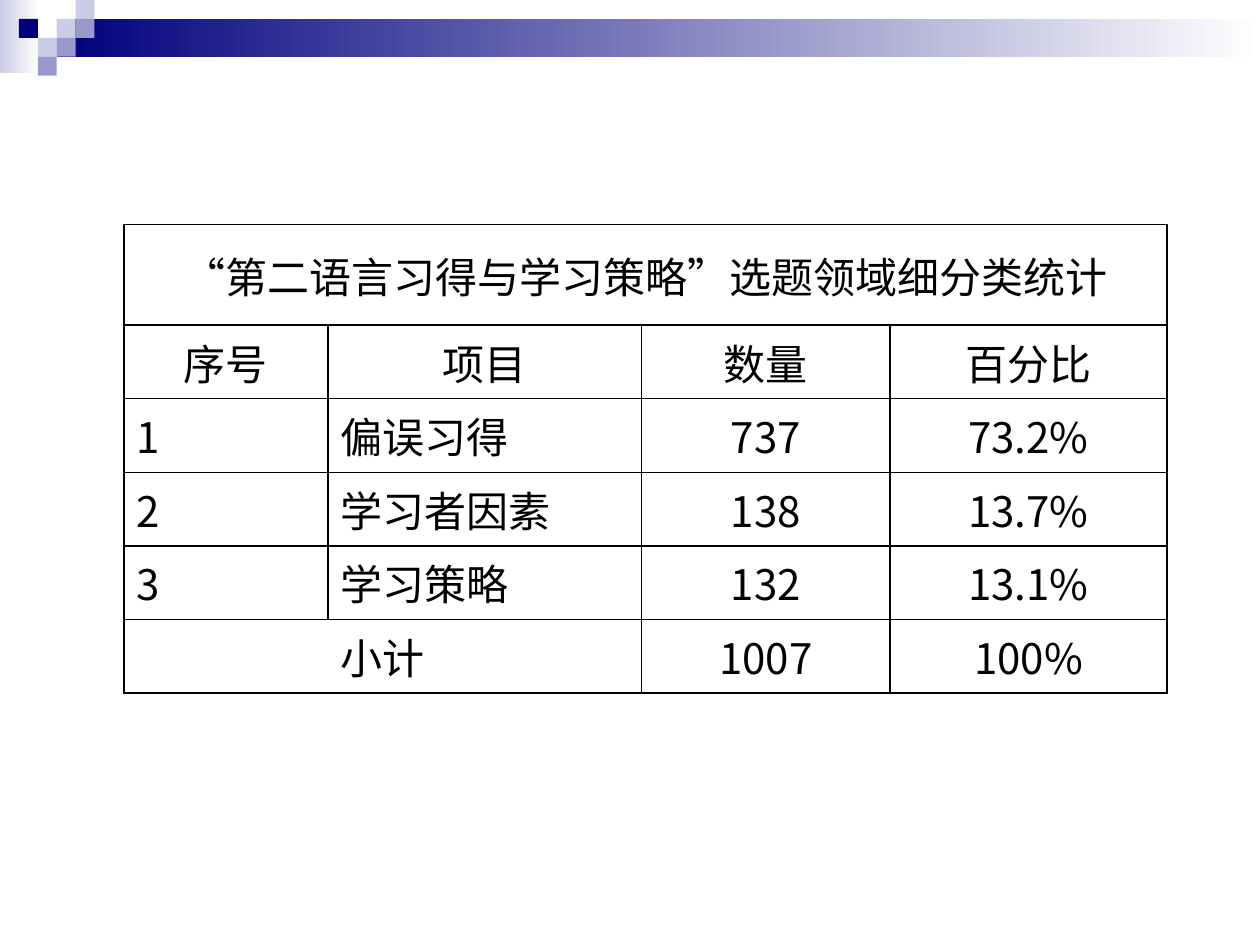
"""Build a slide with a table of topic counts under a checkered gradient banner."""
from lxml import etree
from pptx import Presentation
from pptx import util as u
from pptx.dml.color import RGBColor
from pptx.enum import shapes, text
from pptx.oxml.ns import qn

THEME = {
    "navy": "00007D", "mid": "9999CC", "pale": "CCCCE6", "white": "FFFFFF",
    "ink": "000000", "font": "Noto Sans CJK SC", "size": 24, "rule": 1,
}
SLIDE_SIZE = (720, 540)

HEADING = "“第二语言习得与学习策略”选题领域细分类统计"
COLUMN_NAMES = ("序号", "项目", "数量", "百分比")
TOPICS = [
    ("1", "偏误习得", "737", "73.2%"),
    ("2", "学习者因素", "138", "13.7%"),
    ("3", "学习策略", "132", "13.1%"),
]
SUBTOTAL = ("小计", "", "1007", "100%")

TABLE_LEFT, TABLE_TOP = 70.8, 128.2
COLUMN_WIDTHS = (116.64, 179.28, 141.84, 158.4)
ROW_HEIGHTS = (57.6, 36, 36, 36, 36, 41.04)
HANGING = 27

SQUARE = 10.8
BANDS = [(0, 0, 22.3, 41.8, "pale"), (32.4, SQUARE, 687.6, 21.6, "navy")]
SQUARES = [
    (3, 1, "pale"), (4, 0, "pale"), (4, 1, "mid"), (2, 2, "pale"),
    (1, 1, "navy"), (3, 2, "mid"), (2, 3, "mid"),
]


def rgb(name):
    return RGBColor.from_string(THEME[name])


def add_block(slide, left, top, width, height, colour, fade=False):
    block = slide.shapes.add_shape(
        shapes.MSO_SHAPE.RECTANGLE, *map(u.Pt, (left, top, width, height)))
    block.shadow.inherit = False
    block.line.fill.background()
    if fade:
        block.fill.gradient()
        block.fill.gradient_angle = 0
        for stop, position, name in zip(block.fill.gradient_stops, (0, 1), (colour, "white")):
            stop.position = position
            stop.color.rgb = rgb(name)
    else:
        block.fill.solid()
        block.fill.fore_color.rgb = rgb(colour)


def write(cell, words, align=text.PP_ALIGN.CENTER, size=THEME["size"], colour="ink"):
    cell.vertical_anchor = text.MSO_ANCHOR.MIDDLE
    paragraph = cell.text_frame.paragraphs[0]
    paragraph.alignment = align
    indents = paragraph._p.get_or_add_pPr()
    indents.set("marL", str(u.Pt(HANGING)))
    indents.set("indent", str(-u.Pt(HANGING)))
    run = paragraph.add_run()
    run.text = words
    run.font.size = u.Pt(size)
    run.font.color.rgb = rgb(colour)
    run.font.name = THEME["font"]
    etree.SubElement(run._r.get_or_add_rPr(), qn("a:ea"), typeface=THEME["font"])


def rule_cell(cell):
    properties = cell._tc.get_or_add_tcPr()
    for side in ("lnL", "lnR", "lnT", "lnB"):
        edge = etree.SubElement(properties, qn(f"a:{side}"), w=str(u.Pt(THEME["rule"])))
        fill = etree.SubElement(edge, qn("a:solidFill"))
        etree.SubElement(fill, qn("a:srgbClr"), val=THEME["ink"])
    cell.fill.background()


def add_statistics(slide):
    rows = [(HEADING, "", "", ""), COLUMN_NAMES, *TOPICS, SUBTOTAL]
    frame = slide.shapes.add_table(
        len(rows), len(COLUMN_NAMES), u.Pt(TABLE_LEFT), u.Pt(TABLE_TOP),
        u.Pt(sum(COLUMN_WIDTHS)), u.Pt(sum(ROW_HEIGHTS)))
    statistics = frame.table
    statistics.first_row = statistics.horz_banding = False
    for column, width in zip(statistics.columns, COLUMN_WIDTHS):
        column.width = u.Pt(width)
    for row, height in zip(statistics.rows, ROW_HEIGHTS):
        row.height = u.Pt(height)
    last = len(rows) - 1
    statistics.cell(0, 0).merge(statistics.cell(0, 3))
    statistics.cell(last, 0).merge(statistics.cell(last, 1))
    for r, row in enumerate(rows):
        for c, words in enumerate(row):
            cell = statistics.cell(r, c)
            rule_cell(cell)
            if words:
                is_label = row in TOPICS and c < 2
                write(cell, words,
                      align=text.PP_ALIGN.LEFT if is_label else text.PP_ALIGN.CENTER)


def main():
    deck = Presentation()
    deck.slide_width, deck.slide_height = map(u.Pt, SLIDE_SIZE)
    slide = deck.slides.add_slide(deck.slide_layouts[6])
    for band in BANDS:
        add_block(slide, *band, fade=True)
    for column, row, colour in SQUARES:
        add_block(slide, column * SQUARE, row * SQUARE, SQUARE, SQUARE, colour)
    add_statistics(slide)
    deck.save("out.pptx")


if __name__ == "__main__":
    main()
